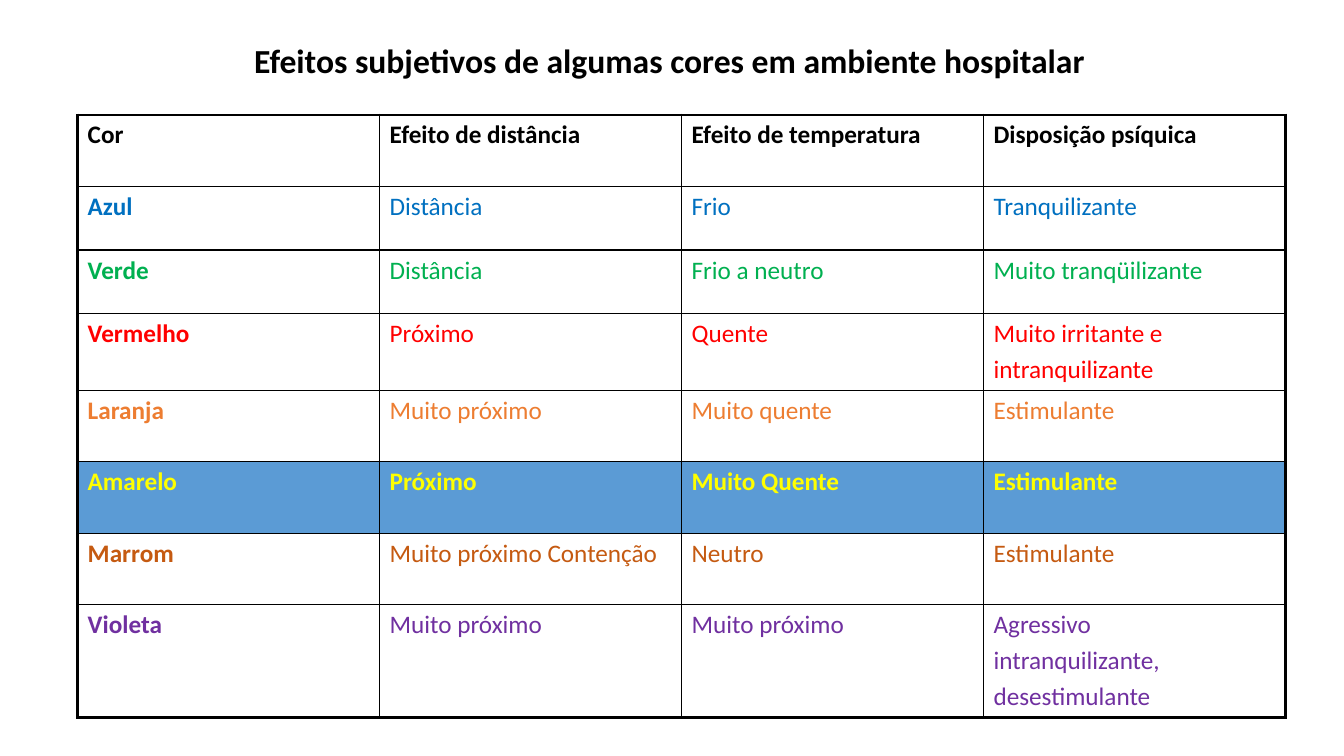
from lxml import etree
from pptx import Presentation
from pptx.dml.color import RGBColor
from pptx.enum.text import MSO_ANCHOR, PP_ALIGN
from pptx.oxml.ns import qn
from pptx.util import Inches, Pt

COLORS = {
    "black": "000000", "blue": "0070C0", "green": "00B050", "red": "FF0000",
    "orange": "ED7D31", "yellow": "FFFF00", "brown": "C55A11",
    "violet": "7030A0", "highlight": "5B9BD5",
}
FONT = "Calibri"
THICK, THIN = 2.25, 1

# Text colour, row height in inches, cell texts
ROWS = [
    ("black", 0.71, ["Cor", "Efeito de distância", "Efeito de temperatura", "Disposição psíquica"]),
    ("blue", 0.63, ["Azul", "Distância", "Frio", "Tranquilizante"]),
    ("green", 0.63, ["Verde", "Distância", "Frio a neutro", "Muito tranqüilizante"]),
    ("red", 0.76, ["Vermelho", "Próximo", "Quente", "Muito irritante e\nintranquilizante"]),
    ("orange", 0.71, ["Laranja", "Muito próximo", "Muito quente", "Estimulante"]),
    ("yellow", 0.71, ["Amarelo", "Próximo", "Muito Quente", "Estimulante"]),
    ("brown", 0.71, ["Marrom", "Muito próximo Contenção", "Neutro", "Estimulante"]),
    ("violet", 1.11, ["Violeta", "Muito próximo", "Muito próximo",
                      "Agressivo\nintranquilizante,\ndesestimulante"]),
]


def write_text(tf, text, size=18, color="black", bold=False,
               align=PP_ALIGN.LEFT, before=0, spacing=1.0):
    """Write one paragraph for each line of text."""
    for i, line in enumerate(text.split("\n")):
        p = tf.add_paragraph() if i else tf.paragraphs[0]
        p.alignment = align
        p.space_before = Pt(before)
        p.line_spacing = spacing
        r = p.add_run()
        r.text = line
        r.font.name = FONT
        r.font.size = Pt(size)
        r.font.bold = bold
        r.font.color.rgb = RGBColor.from_string(COLORS[color])


def set_borders(cell, widths):
    """Draw the borders, given as left, right, top and bottom widths."""
    tc_pr = cell._tc.get_or_add_tcPr()
    for i, (side, width) in enumerate(zip("LRTB", widths)):
        ln = etree.Element(qn(f"a:ln{side}"), w=str(Pt(width)))
        fill = etree.SubElement(ln, qn("a:solidFill"))
        etree.SubElement(fill, qn("a:srgbClr"), val=COLORS["black"])
        tc_pr.insert(i, ln)


def add_title(slide, left, top, width, height):
    sp = slide.shapes.title
    sp.left, sp.top, sp.width, sp.height = map(Inches, (left, top, width, height))
    tf = sp.text_frame
    tf.word_wrap = True
    tf.vertical_anchor = MSO_ANCHOR.TOP
    write_text(tf, "Efeitos subjetivos de algumas cores em ambiente hospitalar",
               size=24, bold=True, align=PP_ALIGN.CENTER, spacing=0.9)


def add_color_table(slide, left, top, width):
    n_rows, n_cols = len(ROWS), len(ROWS[0][2])
    height = sum(row[1] for row in ROWS)
    table = slide.shapes.add_table(n_rows, n_cols, Inches(left), Inches(top),
                                   Inches(width), Inches(height)).table
    table.horz_banding = False
    for col in table.columns:
        col.width = Inches(width / n_cols)

    for i, (color, row_height, texts) in enumerate(ROWS):
        table.rows[i].height = Inches(row_height)
        for j, text in enumerate(texts):
            cell = table.cell(i, j)
            # The yellow row stands on a filled band
            if color == "yellow":
                cell.fill.solid()
                cell.fill.fore_color.rgb = RGBColor.from_string(COLORS["highlight"])
            else:
                cell.fill.background()
            bold = j == 0 or color in ("black", "yellow")
            write_text(cell.text_frame, text, color=color, bold=bold, before=3.6)
            # Outer edges are thick, inner ones thin
            outer = (j == 0, j == n_cols - 1, i == 0, i == n_rows - 1)
            set_borders(cell, [THICK if edge else THIN for edge in outer])


def main():
    prs = Presentation()
    prs.slide_width, prs.slide_height = Inches(13.33), Inches(7.5)
    slide = prs.slides.add_slide(prs.slide_layouts[5])
    add_title(slide, 0.53, 0.39, 12.22, 0.51)
    add_color_table(slide, 0.77, 1.14, 11.98)
    prs.save("out.pptx")


if __name__ == "__main__":
    main()
